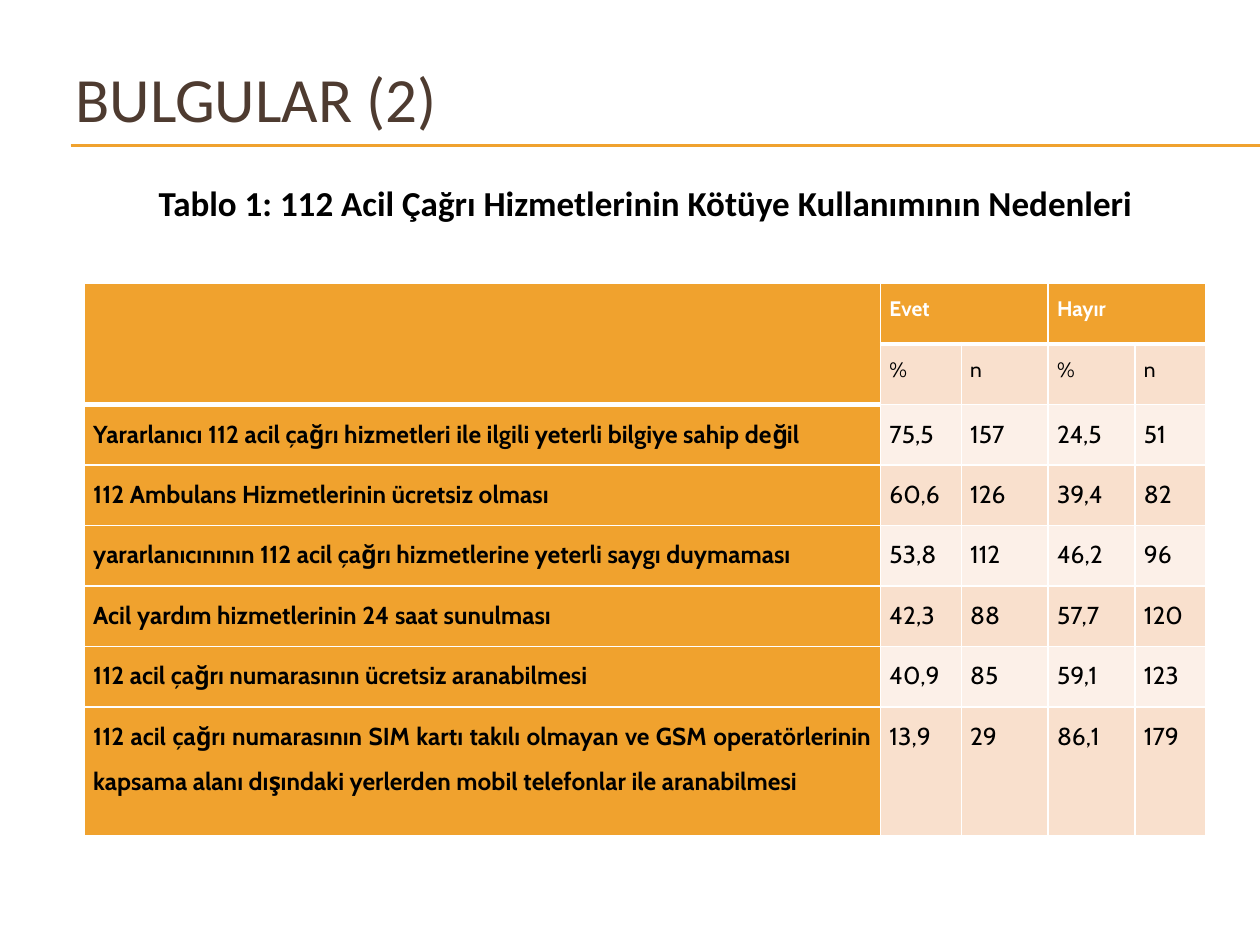
from dataclasses import dataclass

from lxml import etree
from pptx import Presentation
from pptx.dml.color import RGBColor
from pptx.enum.shapes import MSO_CONNECTOR
from pptx.enum.text import MSO_ANCHOR, MSO_AUTO_SIZE, PP_ALIGN
from pptx.oxml.ns import qn
from pptx.slide import Slide
from pptx.table import _Cell
from pptx.util import Inches, Pt

STRAIGHT = MSO_CONNECTOR.STRAIGHT
MIDDLE = MSO_ANCHOR.MIDDLE
GROW = MSO_AUTO_SIZE.SHAPE_TO_FIT_TEXT
LEFT, JUSTIFY = PP_ALIGN.LEFT, PP_ALIGN.JUSTIFY
TITLE_ONLY = 5
GRID_UNIT = Inches(0.01)
PAGE_COLUMNS, PAGE_ROWS = 1000, 750


@dataclass(frozen=True)
class Theme:
    accent: str = "F0A22E"
    title: str = "4E3B30"
    ink: str = "000000"
    paper: str = "FFFFFF"
    band_dark: str = "F9E0CD"
    band_light: str = "FCF0E8"
    heading_font: str = "Calibri"
    table_font: str = "Cabin"
    title_size: int = 36
    caption_size: int = 20
    body_size: int = 14
    header_size: int = 12
    thin: int = 1
    thick: int = 3
    rule: float = 0.75


@dataclass(frozen=True)
class Region:
    column: int
    row: int
    columns: int
    rows: int

    def lengths(self) -> tuple[int, ...]:
        return tuple(part * GRID_UNIT for part in (self.column, self.row, self.columns, self.rows))


@dataclass(frozen=True)
class Reason:
    text: str
    yes_percent: str
    yes_count: str
    no_percent: str
    no_count: str

    def values(self) -> tuple[str, ...]:
        return self.text, self.yes_percent, self.yes_count, self.no_percent, self.no_count


THEME = Theme()
TITLE_REGION = Region(50, 30, 900, 94)
CAPTION_REGION = Region(67, 139, 882, 44)
TABLE_REGION = Region(67, 225, 890, 441)
RULE_START = 56
RULE_ROWS = (115, 116)
COLUMN_SPANS = (632, 64, 69, 69, 56)
ROW_SPANS = (48,) * 7 + (102,)
CAPTION_INDENT = 49
CELL_INSET = 7

REASONS = (
    Reason("Yararlanıcı 112 acil çağrı hizmetleri ile ilgili yeterli bilgiye sahip değil",
           "75,5", "157", "24,5", "51"),
    Reason("112 Ambulans Hizmetlerinin ücretsiz olması", "60,6", "126", "39,4", "82"),
    Reason("yararlanıcınının 112 acil çağrı hizmetlerine yeterli saygı duymaması",
           "53,8", "112", "46,2", "96"),
    Reason("Acil yardım hizmetlerinin 24 saat sunulması", "42,3", "88", "57,7", "120"),
    Reason("112 acil çağrı numarasının ücretsiz aranabilmesi", "40,9", "85", "59,1", "123"),
    Reason("112 acil çağrı numarasının SIM kartı takılı olmayan ve GSM operatörlerinin "
           "kapsama alanı dışındaki yerlerden mobil telefonlar ile aranabilmesi",
           "13,9", "29", "86,1", "179"),
)
HEADER_ROWS = (("", "Evet", "", "Hayır", ""), ("", "%", "n", "%", "n"))


def style_font(font, name: str, size: int, color: str, bold: bool = False) -> None:
    font.name = name
    font.size = Pt(size)
    font.bold = bold
    font.color.rgb = RGBColor.from_string(color)


def add_title(page: Slide, text: str) -> None:
    title = page.shapes.title
    title.left, title.top, title.width, title.height = TITLE_REGION.lengths()
    title.text_frame.text = text
    title.text_frame.vertical_anchor = MIDDLE
    para = title.text_frame.paragraphs[0]
    para.alignment = LEFT
    style_font(para.font, THEME.heading_font, THEME.title_size, THEME.title)


def add_rule(page: Slide, row: int) -> None:
    height = row * GRID_UNIT
    rule = page.shapes.add_connector(
        STRAIGHT, RULE_START * GRID_UNIT, height, PAGE_COLUMNS * GRID_UNIT, height)
    rule.line.color.rgb = RGBColor.from_string(THEME.accent)
    rule.line.width = Pt(THEME.rule)
    etree.SubElement(rule._element.spPr, qn("a:effectLst"))


def add_caption(page: Slide, text: str) -> None:
    box = page.shapes.add_textbox(*CAPTION_REGION.lengths())
    frame = box.text_frame
    frame.word_wrap = True
    frame.auto_size = GROW
    frame.vertical_anchor = MIDDLE
    frame.text = text
    para = frame.paragraphs[0]
    para._p.get_or_add_pPr().set("indent", str(CAPTION_INDENT * GRID_UNIT))
    style_font(para.font, THEME.heading_font, THEME.caption_size, THEME.ink, True)


def is_thick_below(row: int, column: int) -> bool:
    return row == 0 or (row == 1 and column == 0)


def add_borders(cell: _Cell, row: int, column: int) -> None:
    properties = cell._tc.get_or_add_tcPr()
    thick_edges = {"T": is_thick_below(row - 1, column), "B": is_thick_below(row, column)}
    for position, edge in enumerate("LRTB"):
        width = THEME.thick if thick_edges.get(edge) else THEME.thin
        border = etree.Element(qn(f"a:ln{edge}"), w=str(Pt(width)))
        fill = etree.SubElement(border, qn("a:solidFill"))
        etree.SubElement(fill, qn("a:srgbClr"), val=THEME.paper)
        properties.insert(position, border)


def format_cell(cell: _Cell, text: str, row: int, column: int) -> None:
    is_label = row == 0 or column == 0
    band = THEME.band_dark if row % 2 else THEME.band_light
    cell.fill.solid()
    cell.fill.fore_color.rgb = RGBColor.from_string(THEME.accent if is_label else band)
    cell.margin_left = cell.margin_right = CELL_INSET * GRID_UNIT
    cell.margin_top = cell.margin_bottom = 0
    cell.text = text
    para = cell.text_frame.paragraphs[0]
    para.alignment = JUSTIFY
    para.line_spacing = 1.5
    size = THEME.header_size if row < len(HEADER_ROWS) else THEME.body_size
    color = THEME.paper if row == 0 else THEME.ink
    style_font(para.font, THEME.table_font, size, color, is_label)
    add_borders(cell, row, column)


def add_reason_table(page: Slide) -> None:
    rows = HEADER_ROWS + tuple(reason.values() for reason in REASONS)
    table = page.shapes.add_table(
        len(rows), len(COLUMN_SPANS), *TABLE_REGION.lengths()).table
    table.first_row = table.horz_banding = False
    for column, span in zip(table.columns, COLUMN_SPANS):
        column.width = span * GRID_UNIT
    for row, span in zip(table.rows, ROW_SPANS):
        row.height = span * GRID_UNIT
    for row, values in enumerate(rows):
        for column, text in enumerate(values):
            format_cell(table.cell(row, column), text, row, column)
    table.cell(0, 0).merge(table.cell(1, 0))
    for column in (1, 3):
        table.cell(0, column).merge(table.cell(0, column + 1))


def main() -> None:
    deck = Presentation()
    deck.slide_width = PAGE_COLUMNS * GRID_UNIT
    deck.slide_height = PAGE_ROWS * GRID_UNIT
    page = deck.slides.add_slide(deck.slide_layouts[TITLE_ONLY])
    for row in RULE_ROWS:
        add_rule(page, row)
    add_title(page, "BULGULAR (2)")
    add_reason_table(page)
    add_caption(page, "Tablo 1: 112 Acil Çağrı Hizmetlerinin Kötüye Kullanımının Nedenleri")
    deck.save("out.pptx")


if __name__ == "__main__":
    main()
